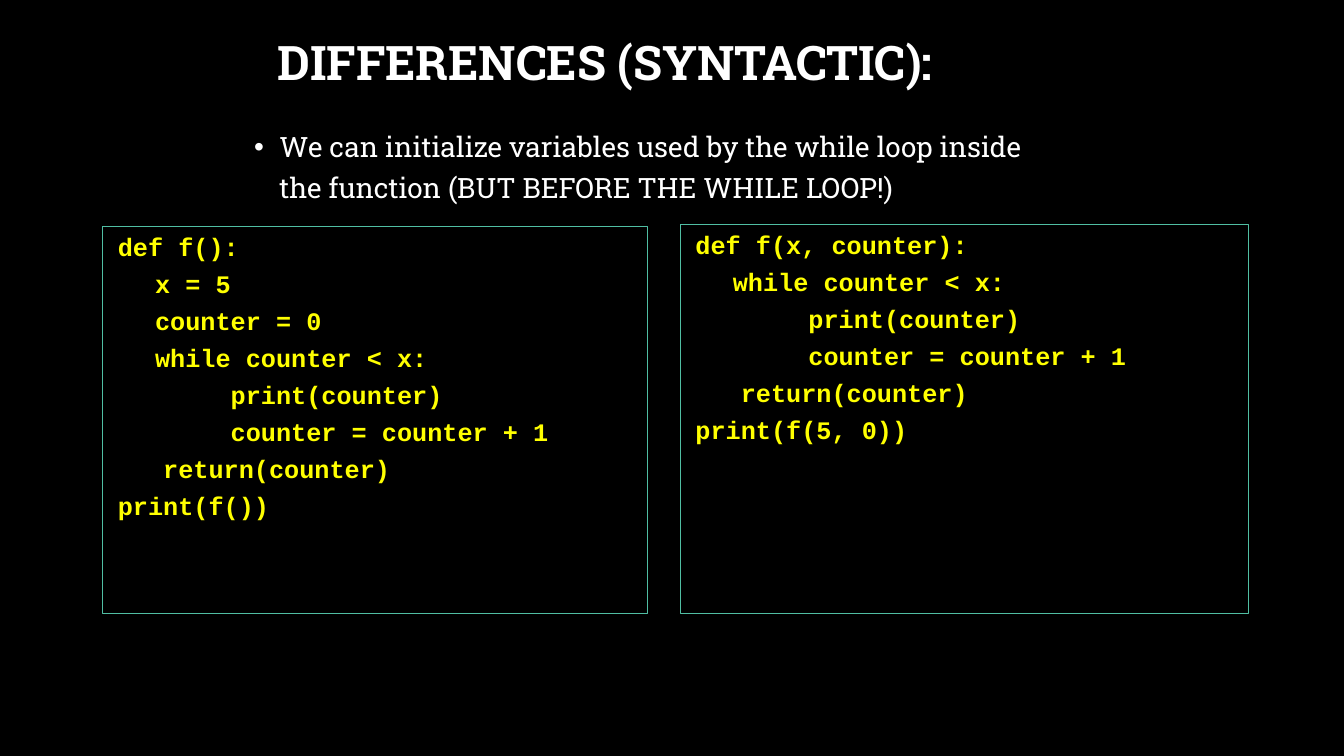
from pptx import Presentation
from pptx.dml.color import RGBColor
from pptx.enum.shapes import MSO_SHAPE
from pptx.enum.text import MSO_ANCHOR, MSO_AUTO_SIZE, PP_ALIGN
from pptx.util import Inches, Pt

RECTANGLE = MSO_SHAPE.RECTANGLE
TOP, MIDDLE = MSO_ANCHOR.TOP, MSO_ANCHOR.MIDDLE
LEFT, CENTER = PP_ALIGN.LEFT, PP_ALIGN.CENTER
NO_AUTOFIT = MSO_AUTO_SIZE.NONE

COLORS = {"background": "000000", "text": "FFFFFF", "code": "FFFF00", "frame": "50BEA3"}
HEADING_FONT, CODE_FONT = "Roboto Slab", "Courier New"
SLIDE_WIDTH, SLIDE_HEIGHT = 13.33, 7.5

# Boxes in inches: left, top, width, height
TITLE_BOX = (2.25, 0.27, 7.5, 0.75)
POINT_BOX = (2.42, 1.17, 7.88, 1.52)
LOCALS_BOX = (1.02, 2.25, 5.4, 3.84)
PARAMETERS_BOX = (6.75, 2.23, 5.63, 3.86)

# Left margin of a code line, by its role in the function
OUTER, BODY, RETURN, LOOP = 0.05, 0.42, 0.5, 1.17
LOOP_CODE = [
    (BODY, "while counter < x:"),
    (LOOP, "print(counter)"),
    (LOOP, "counter = counter + 1"),
    (RETURN, "return(counter)"),
]
LOCALS_CODE = [
    (OUTER, "def f():"),
    (BODY, "x = 5"),
    (BODY, "counter = 0"),
    *LOOP_CODE,
    (OUTER, "print(f())"),
]
PARAMETERS_CODE = [
    (OUTER, "def f(x, counter):"),
    *LOOP_CODE,
    (OUTER, "print(f(5, 0))"),
]


def color(name):
    return RGBColor.from_string(COLORS[name])


def place(placeholder, box):
    placeholder.left, placeholder.top, placeholder.width, placeholder.height = map(Inches, box)


def set_font(paragraph, name, size, color_name, bold):
    font = paragraph.font
    font.name, font.size, font.bold = name, Pt(size), bold
    font.color.rgb = color(color_name)


def set_indent(paragraph, margin, first_line=0):
    properties = paragraph._p.get_or_add_pPr()
    properties.set("marL", str(Inches(margin)))
    properties.set("indent", str(Inches(first_line)))


def fill_placeholder(placeholder, box, text, size, bold, anchor):
    place(placeholder, box)
    frame = placeholder.text_frame
    frame.text = text
    frame.auto_size = NO_AUTOFIT
    frame.vertical_anchor = anchor
    paragraph = frame.paragraphs[0]
    set_font(paragraph, HEADING_FONT, size, "text", bold)
    return paragraph


def add_title(slide, box):
    heading = fill_placeholder(slide.shapes.title, box, "DIFFERENCES (SYNTACTIC):", 34, True, MIDDLE)
    heading.alignment = CENTER
    heading.line_spacing = 0.9


def add_point(slide, box):
    point = fill_placeholder(
        slide.placeholders[1], box,
        "We can initialize variables used by the while loop inside the function "
        "(BUT BEFORE THE WHILE LOOP!)", 20, False, TOP)
    point.line_spacing = 1.2
    point.space_before = Pt(10)
    set_indent(point, 0.25, -0.25)


def add_code_panel(slide, box, code):
    panel = slide.shapes.add_shape(RECTANGLE, *map(Inches, box))
    panel.shadow.inherit = False
    panel.fill.background()
    panel.line.color.rgb = color("frame")
    panel.line.width = Pt(0.75)

    frame = panel.text_frame
    frame.word_wrap = True
    frame.vertical_anchor = TOP
    frame.text = "\n".join(statement for _, statement in code)
    for paragraph, (margin, _) in zip(frame.paragraphs, code):
        paragraph.alignment = LEFT
        paragraph.space_before = Pt(4.8)
        set_indent(paragraph, margin)
        set_font(paragraph, CODE_FONT, 18, "code", True)


def main():
    deck = Presentation()
    deck.slide_width, deck.slide_height = Inches(SLIDE_WIDTH), Inches(SLIDE_HEIGHT)
    slide = deck.slides.add_slide(deck.slide_layouts[1])
    slide.background.fill.solid()
    slide.background.fill.fore_color.rgb = color("background")

    add_title(slide, TITLE_BOX)
    add_point(slide, POINT_BOX)
    add_code_panel(slide, LOCALS_BOX, LOCALS_CODE)
    add_code_panel(slide, PARAMETERS_BOX, PARAMETERS_CODE)
    deck.save("out.pptx")


if __name__ == "__main__":
    main()
